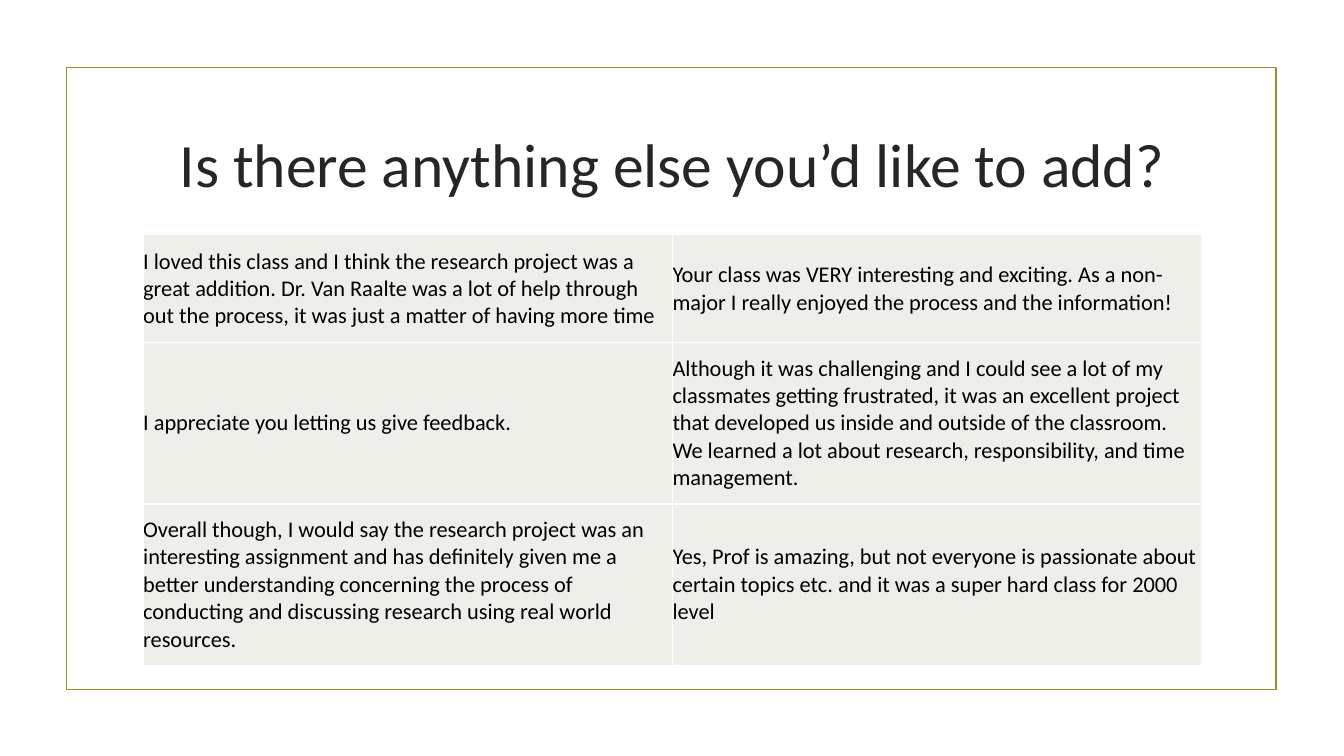
"""Build a slide of student feedback in a two-column table."""
from dataclasses import dataclass

from lxml.etree import SubElement
from pptx import Presentation
from pptx.dml.color import RGBColor
from pptx.enum.shapes import MSO_SHAPE
from pptx.enum.text import MSO_ANCHOR, PP_ALIGN
from pptx.oxml.ns import qn
from pptx.slide import Slide
from pptx.table import _Cell
from pptx.text.text import _Paragraph
from pptx.util import Inches, Pt

FONT = "Calibri"
COLUMN_WIDTH = 5.25


@dataclass
class FeedbackRow:
    height: float
    comments: tuple[str, str]


FEEDBACK = [
    FeedbackRow(1.07, (
        "I loved this class and I think the research project was a great addition. "
        "Dr. Van Raalte was a lot of help through out the process, "
        "it was just a matter of having more time",
        "Your class was VERY interesting and exciting. "
        "As a non-major I really enjoyed the process and the information!")),
    FeedbackRow(1.6, (
        "I appreciate you letting us give feedback.",
        "Although it was challenging and I could see a lot of my classmates getting "
        "frustrated, it was an excellent project that developed us inside and outside "
        "of the classroom. We learned a lot about research, responsibility, "
        "and time management.")),
    FeedbackRow(1.6, (
        "Overall though, I would say the research project was an interesting "
        "assignment and has definitely given me a better understanding concerning "
        "the process of conducting and discussing research using real world resources.",
        "Yes, Prof is amazing, but not everyone is passionate about certain topics etc. "
        "and it was a super hard class for 2000 level")),
]


def color(code: str) -> RGBColor:
    """Turn a hex string into a colour."""
    return RGBColor.from_string(code)


def add_span(para: _Paragraph, text: str, size: float, code: str) -> None:
    """Add one formatted run to a paragraph."""
    span = para.add_run()
    span.text = text
    span.font.name = FONT
    span.font.size = Pt(size)
    span.font.color.rgb = color(code)


def add_title(page: Slide, text: str) -> None:
    """Place and fill the title placeholder."""
    title = page.shapes.title
    title.left, title.top = Inches(1.42), Inches(0.9)
    title.width, title.height = Inches(10.5), Inches(1.43)
    title.text_frame.vertical_anchor = MSO_ANCHOR.MIDDLE
    para = title.text_frame.paragraphs[0]
    para.alignment = PP_ALIGN.CENTER
    add_span(para, text, 44, "262626")


def add_frame(page: Slide) -> None:
    """Draw the green outline behind the title."""
    frame = page.shapes.add_shape(
        MSO_SHAPE.RECTANGLE, Inches(0.66), Inches(0.67), Inches(12), Inches(6.17))
    frame.shadow.inherit = False
    frame.fill.background()
    frame.line.color.rgb = color("83992A")
    frame.line.width = Pt(1.25)
    page.shapes.title.element.addprevious(frame.element)


def set_borders(cell: _Cell, code: str, width: float) -> None:
    """Give all four sides of a cell the same border."""
    properties = cell._tc.get_or_add_tcPr()
    for position, side in enumerate(("a:lnL", "a:lnR", "a:lnT", "a:lnB")):
        border = SubElement(properties, qn(side), w=str(Pt(width)))
        fill = SubElement(border, qn("a:solidFill"))
        SubElement(fill, qn("a:srgbClr"), val=code)
        properties.insert(position, border)


def fill_cell(cell: _Cell, comment: str) -> None:
    """Format a cell and write its comment."""
    cell.fill.solid()
    cell.fill.fore_color.rgb = color("EDEFE8")
    cell.margin_left = cell.margin_right = 0
    cell.margin_top = cell.margin_bottom = 0
    cell.vertical_anchor = MSO_ANCHOR.MIDDLE
    set_borders(cell, "FFFFFF", 1)
    add_span(cell.text_frame.paragraphs[0], comment, 16, "000000")


def add_feedback(page: Slide, feedback: list[FeedbackRow]) -> None:
    """Add the table of comments."""
    table = page.shapes.add_table(
        len(feedback), 2, Inches(1.42), Inches(2.33), Inches(2 * COLUMN_WIDTH),
        Inches(sum(entry.height for entry in feedback))).table
    table.first_row = table.horz_banding = False
    for column in table.columns:
        column.width = Inches(COLUMN_WIDTH)
    for row, entry in zip(table.rows, feedback):
        row.height = Inches(entry.height)
        for cell, comment in zip(row.cells, entry.comments):
            fill_cell(cell, comment)


def main() -> None:
    """Build and save the deck."""
    deck = Presentation()
    deck.slide_width, deck.slide_height = Inches(13.33), Inches(7.5)
    page = deck.slides.add_slide(deck.slide_layouts.get_by_name("Title Only"))
    add_title(page, "Is there anything else you’d like to add?")
    add_frame(page)
    add_feedback(page, FEEDBACK)
    deck.save("out.pptx")


if __name__ == "__main__":
    main()
